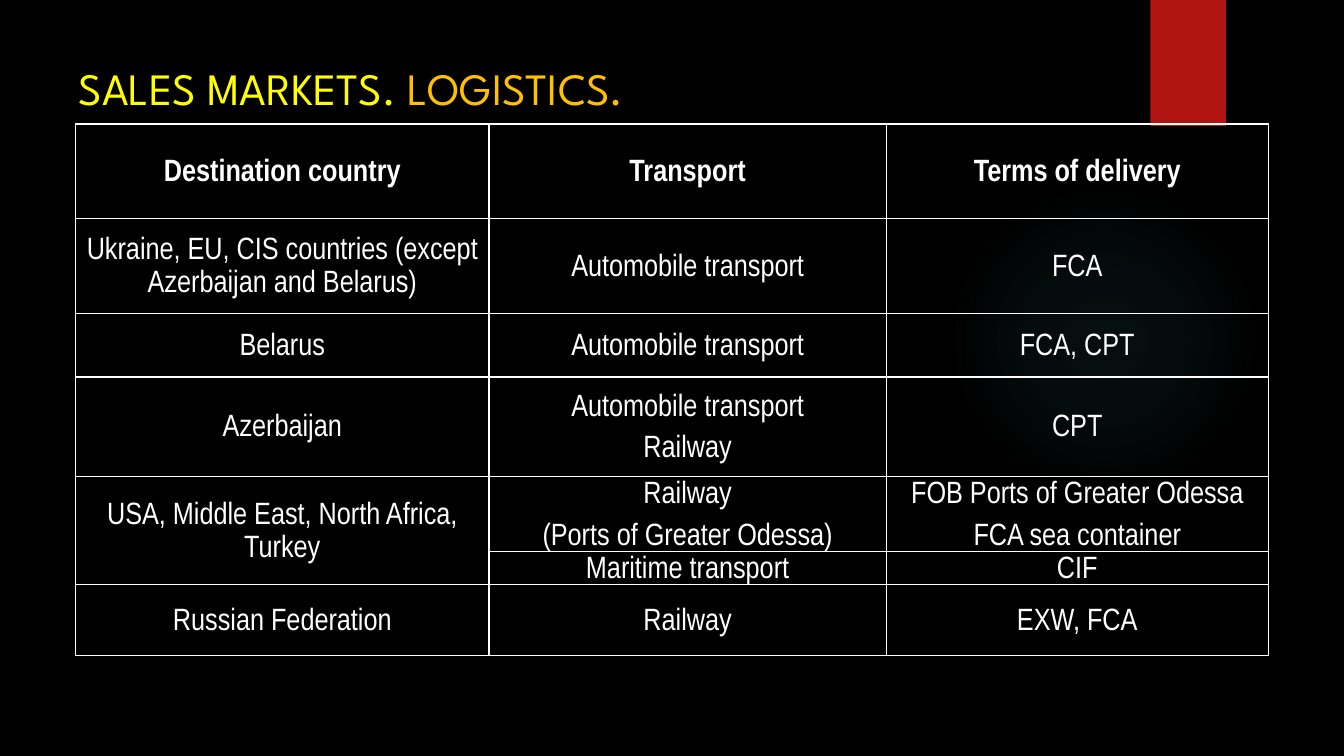
from lxml.etree import SubElement
from pptx import Presentation
from pptx.dml.color import RGBColor
from pptx.enum.shapes import MSO_SHAPE as Shape
from pptx.enum.text import MSO_ANCHOR as Anchor, PP_ALIGN as Align
from pptx.oxml import parse_xml
from pptx.oxml.ns import nsdecls, qn
from pptx.util import Inches, Pt

BLACK = RGBColor(0x00, 0x00, 0x00)
WHITE = RGBColor(0xFF, 0xFF, 0xFF)
RED = RGBColor(0xB0, 0x15, 0x13)
TEAL = RGBColor(0x50, 0xB9, 0xC1)
YELLOW = RGBColor(0xFF, 0xFF, 0x00)
AMBER = RGBColor(0xFF, 0xC0, 0x00)

TITLE_FONT = "League Spartan"
TABLE_FONT = "Arial Narrow"

COLUMN_WIDTHS = (4.1, 3.94, 3.79)
ROW_HEIGHTS = (0.94, 0.94, 0.63, 0.99, 0.74, 0.33, 0.7)
# A line break inside an entry starts a new paragraph
ROWS = (
    ("Destination country", "Transport", "Terms of delivery"),
    ("Ukraine, EU, CIS countries (except Azerbaijan and Belarus)",
     "Automobile transport", "FCA"),
    ("Belarus", "Automobile transport", "FCA, CPT"),
    ("Azerbaijan", "Automobile transport\nRailway", "CPT"),
    ("USA, Middle East, North Africa, Turkey",
     "Railway\n(Ports of Greater Odessa)",
     "FOB Ports of Greater Odessa\nFCA sea container"),
    ("", "Maritime transport", "CIF"),
    ("Russian Federation", "Railway", "EXW, FCA"),
)


def add_plain_shape(page, kind, left, top, width, height):
    shape = page.shapes.add_shape(
        kind, Inches(left), Inches(top), Inches(width), Inches(height))
    shape.shadow.inherit = False
    shape.line.fill.background()
    return shape


def add_glow(page):
    glow = add_plain_shape(page, Shape.OVAL, 9.41, 1.83, 3.08, 3.08)
    stops = "".join(
        f'<a:gs pos="{position * 1000}"><a:srgbClr val="{TEAL}">'
        f'<a:alpha val="{opacity * 1000}"/></a:srgbClr></a:gs>'
        for position, opacity in ((0, 7), (36, 6), (69, 0)))
    gradient = parse_xml(
        f'<a:gradFill {nsdecls("a")}><a:gsLst>{stops}</a:gsLst>'
        '<a:path path="circle"><a:fillToRect l="50000" t="50000" r="50000" b="50000"/>'
        '</a:path></a:gradFill>')
    glow.element.spPr.find(qn("a:prstGeom")).addnext(gradient)


def add_ribbon(page):
    ribbon = add_plain_shape(page, Shape.RECTANGLE, 11.41, 0, 0.75, 1.25)
    ribbon.fill.solid()
    ribbon.fill.fore_color.rgb = RED
    effects = ribbon.element.spPr.find(qn("a:effectLst"))
    effects.append(parse_xml(
        f'<a:outerShdw {nsdecls("a")} blurRad="{Pt(3)}" dist="{Pt(2)}" dir="5400000">'
        f'<a:srgbClr val="{BLACK}"><a:alpha val="45000"/></a:srgbClr></a:outerShdw>'))


def write_title(page):
    title = page.shapes.title
    title.left, title.top = Inches(0.68), Inches(0.5)
    title.width, title.height = Inches(11.6), Inches(0.73)
    title.text_frame.vertical_anchor = Anchor.MIDDLE
    para = title.text_frame.paragraphs[0]
    para.alignment = Align.LEFT
    para.font.name = TITLE_FONT
    para.font.size = Pt(32)
    for words, color in (("SALES MARKETS. ", YELLOW), ("LOGISTICS.", AMBER)):
        span = para.add_run()
        span.text = words
        span.font.color.rgb = color


def add_borders(cell):
    properties = cell._tc.get_or_add_tcPr()
    for index, side in enumerate(("a:lnL", "a:lnR", "a:lnT", "a:lnB")):
        line = parse_xml(f'<{side} {nsdecls("a")} w="{Pt(1)}"/>')
        fill = SubElement(line, qn("a:solidFill"))
        SubElement(fill, qn("a:srgbClr"), val=str(WHITE))
        properties.insert(index, line)


def format_cell(cell, text, bold):
    cell.text = text
    cell.fill.background()
    cell.vertical_anchor = Anchor.MIDDLE
    cell.margin_left = cell.margin_right = Inches(0.07)
    cell.margin_top = cell.margin_bottom = 0
    for para in cell.text_frame.paragraphs:
        para.alignment = Align.CENTER
        para.line_spacing = 1.15
        para.space_after = Pt(6)
        para.font.name = TABLE_FONT
        para.font.size = Pt(22)
        para.font.bold = bold
        para.font.color.rgb = WHITE
    add_borders(cell)


def add_delivery_table(page):
    frame = page.shapes.add_table(
        len(ROWS), len(COLUMN_WIDTHS), Inches(0.75), Inches(1.23),
        Inches(sum(COLUMN_WIDTHS)), Inches(sum(ROW_HEIGHTS)))
    table = frame.table
    table.first_row = table.horz_banding = False
    for column, width in zip(table.columns, COLUMN_WIDTHS):
        column.width = Inches(width)
    for row, height in zip(table.rows, ROW_HEIGHTS):
        row.height = Inches(height)
    for row_index, texts in enumerate(ROWS):
        for column_index, text in enumerate(texts):
            format_cell(table.cell(row_index, column_index), text, row_index == 0)
    # Overseas destinations share one cell
    table.cell(4, 0).merge(table.cell(5, 0))


def main():
    deck = Presentation()
    deck.slide_width, deck.slide_height = Inches(13.33), Inches(7.5)
    page = deck.slides.add_slide(deck.slide_layouts[5])
    page.background.fill.solid()
    page.background.fill.fore_color.rgb = BLACK

    # Backdrop
    add_glow(page)
    add_ribbon(page)

    # Content
    write_title(page)
    add_delivery_table(page)
    deck.save("out.pptx")


if __name__ == "__main__":
    main()
